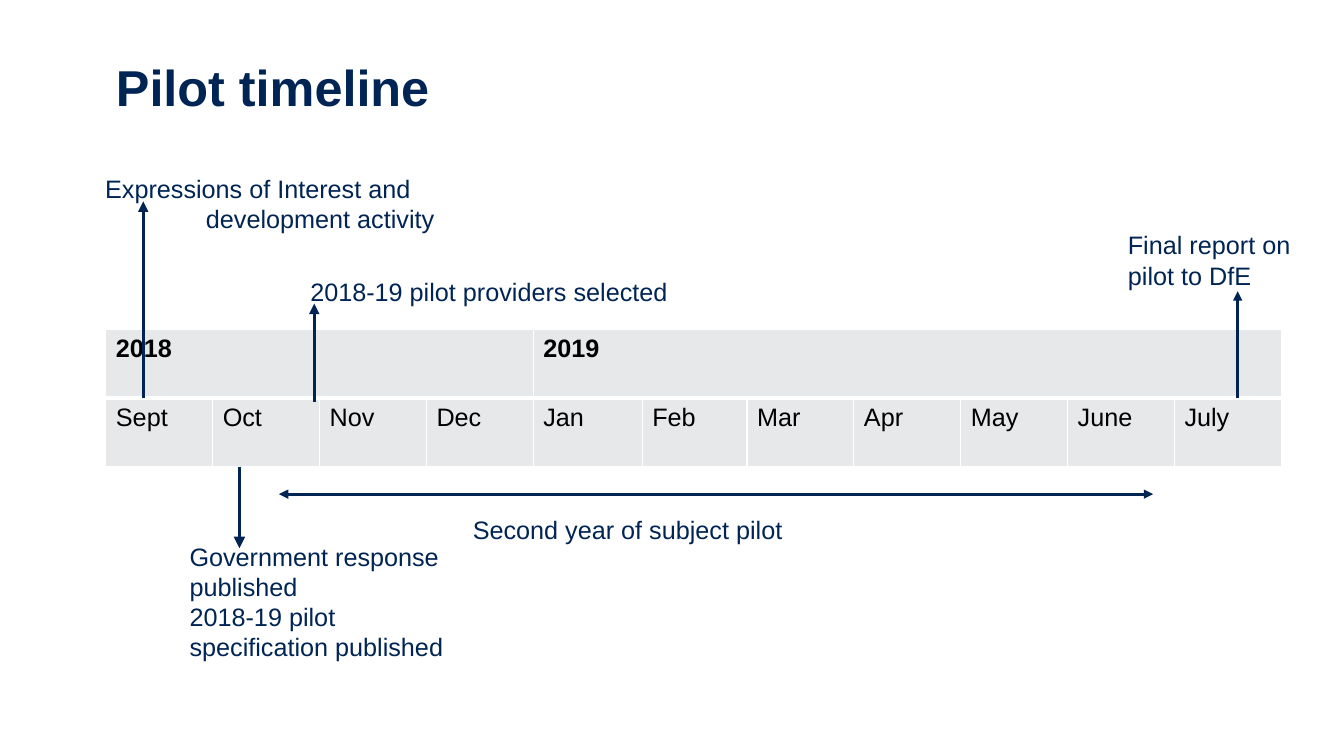
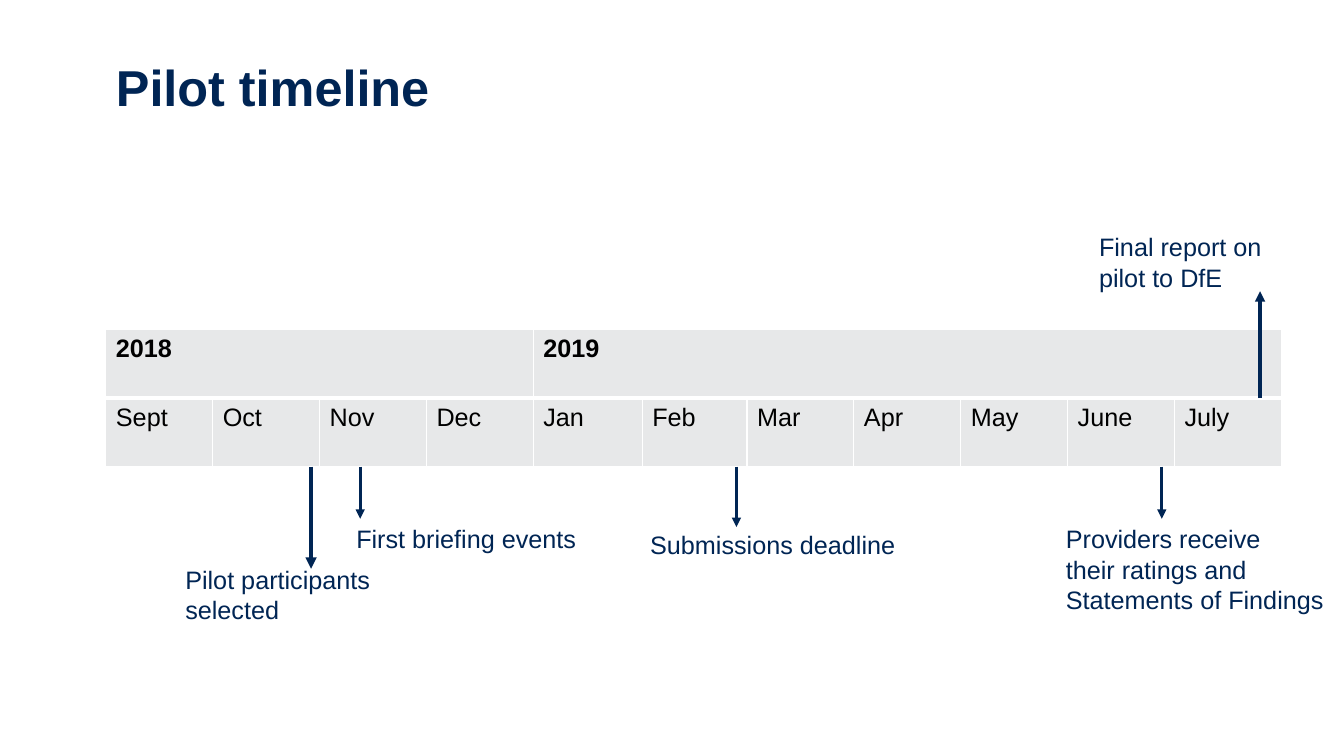
from dataclasses import dataclass
from lxml.etree import SubElement
from pptx import Presentation
from pptx.dml.color import RGBColor
from pptx.enum.shapes import MSO_CONNECTOR
from pptx.enum.text import MSO_ANCHOR, MSO_AUTO_SIZE, PP_ALIGN
from pptx.oxml.ns import qn
from pptx.util import Inches, Pt


@dataclass(frozen=True)
class Theme:
    navy: RGBColor = RGBColor(0x00, 0x25, 0x54)
    black: RGBColor = RGBColor(0, 0, 0)
    grey: RGBColor = RGBColor(0xE7, 0xE8, 0xE9)
    rule: str = "FFFFFF"
    font: str = "Arial"
    head: int = 36
    text: int = 18


THEME = Theme()
LEFT, TOP, COL, ROW = 1.05, 3.27, 1.06, 0.68
LINE = 0.3
MONTHS = "Sept Oct Nov Dec Jan Feb Mar Apr May June July".split()
YEARS = {"2018": (0, 3), "2019": (4, 10)}
NUDGE = {"Jan": 0.02, "Feb": -0.02}


def col(n):
    """Place of a point n months after the table's left edge."""
    return Inches(LEFT + n * COL)


def row(n):
    """Place of a point n rows below the table's top edge."""
    return Inches(TOP + n * ROW)


def style(para, size, color, bold=False):
    font = para.font
    font.name, font.size, font.bold = THEME.font, Pt(size), bold
    font.color.rgb = color


def title(slide, text):
    shape = slide.shapes.title
    shape.left, shape.top = Inches(LEFT), Inches(0.4)
    shape.width, shape.height = Inches(11.24), Inches(0.99)
    frame = shape.text_frame
    frame.text = text
    frame.vertical_anchor = MSO_ANCHOR.MIDDLE
    para = frame.paragraphs[0]
    para.alignment = PP_ALIGN.LEFT
    para.line_spacing = 0.9
    style(para, THEME.head, THEME.navy, True)


def border(cell, **sides):
    """Rule the sides L, R, T and B, in that order, in points."""
    props = cell._tc.get_or_add_tcPr()
    for side, width in sides.items():
        line = SubElement(props, qn(f"a:ln{side}"), w=str(Pt(width)))
        fill = SubElement(line, qn("a:solidFill"))
        SubElement(fill, qn("a:srgbClr"), val=THEME.rule)


def table(slide):
    size = len(MONTHS)
    grid = slide.shapes.add_table(
        2, size, col(0), row(0), Inches(size * COL), Inches(2 * ROW)).table
    grid.first_row = grid.horz_banding = False
    for n, month in enumerate(MONTHS):
        grid.columns[n].width = Inches(COL + NUDGE.get(month, 0))
        grid.cell(1, n).text = month
    for year, (first, last) in YEARS.items():
        grid.cell(0, first).merge(grid.cell(0, last))
        grid.cell(0, first).text = year
    for r in range(2):
        for n in range(size):
            cell = grid.cell(r, n)
            border(cell, L=1, R=1, T=3 if r else 1, B=1 if r else 3)
            cell.fill.solid()
            cell.fill.fore_color.rgb = THEME.grey
            style(cell.text_frame.paragraphs[0], THEME.text, THEME.black, r == 0)


def arrow(slide, start, end, width=2.25, ends=("tailEnd",)):
    """Draw an arrow between two (month, row) points."""
    shape = slide.shapes.add_connector(
        MSO_CONNECTOR.STRAIGHT, col(start[0]), row(start[1]),
        col(end[0]), row(end[1]))
    shape.line.color.rgb = THEME.navy
    shape.line.width = Pt(width)
    props = shape._element.spPr
    for tag in ends:
        SubElement(props.find(qn("a:ln")), qn(f"a:{tag}"), type="triangle")
    SubElement(props, qn("a:effectLst"))


def note(slide, x, y, width, paras, lines=1, wrap=True, indent=0):
    """Write a label; indent, in inches, moves its last paragraph."""
    shape = slide.shapes.add_textbox(
        col(x), row(y), Inches(width * COL), Inches(0.1 + lines * LINE))
    frame = shape.text_frame
    frame.word_wrap = wrap
    frame.auto_size = MSO_AUTO_SIZE.SHAPE_TO_FIT_TEXT
    frame.text = "\n".join(paras)
    for para in frame.paragraphs:
        style(para, THEME.text, THEME.navy)
    if indent:
        para.font  # the last paragraph's properties now exist
        para._p.get_or_add_pPr().set("marL", str(Inches(indent)))


def base(deck):
    """Add a slide with the shared title and calendar."""
    slide = deck.slides.add_slide(deck.slide_layouts[5])
    title(slide, "Pilot timeline")
    table(slide)
    return slide


def launch(deck):
    slide = base(deck)
    arrow(slide, (1.25, 2), (1.25, 3.19), 2.75)
    note(slide, 0.69, 3.01, 2.65,
         ["Government response published",
          "2018-19 pilot specification published"], 4)
    arrow(slide, (1.95, 1.06), (1.95, -0.38), 2.5)
    arrow(slide, (1.62, 2.4), (9.8, 2.4), ends=("headEnd", "tailEnd"))
    note(slide, 3.34, 2.63, 3.65, ["Second year of subject pilot"])
    arrow(slide, (0.35, 1), (0.35, -1.87), 2.5)
    note(slide, -0.1, -2.35, 3.3,
         ["Expressions of Interest and", "development activity"],
         2, wrap=False, indent=1)
    note(slide, 1.82, -0.85, 3.57, ["2018-19 pilot providers selected"],
         wrap=False)
    arrow(slide, (10.59, 1), (10.59, -0.56))
    note(slide, 9.47, -1.53, 1.79, ["Final report on", "pilot to DfE"],
         2, wrap=False)


def finish(deck):
    slide = base(deck)
    arrow(slide, (10.8, 1), (10.8, -0.56), 2.5)
    note(slide, 9.2, -1.5, 2.18, ["Final report on pilot to DfE"], 2)
    arrow(slide, (1.92, 2), (1.92, 3.49), 2.75)
    note(slide, 0.65, 3.35, 2.65, ["Pilot participants selected"], 2)
    for month, end in ((2.38, 2.76), (5.9, 2.88), (9.88, 2.76)):
        arrow(slide, (month, 2), (month, end))
    note(slide, 2.25, 2.76, 2.67, ["First briefing events"])
    note(slide, 5, 2.84, 2.51, ["Submissions deadline"], wrap=False)
    note(slide, 8.89, 2.76, 2.62,
         ["Providers receive", "their ratings and", "Statements of Findings"],
         3, wrap=False)


def main():
    deck = Presentation()
    deck.slide_width, deck.slide_height = Inches(13.33), Inches(7.5)
    launch(deck)
    finish(deck)
    deck.save("out.pptx")


if __name__ == "__main__":
    main()
